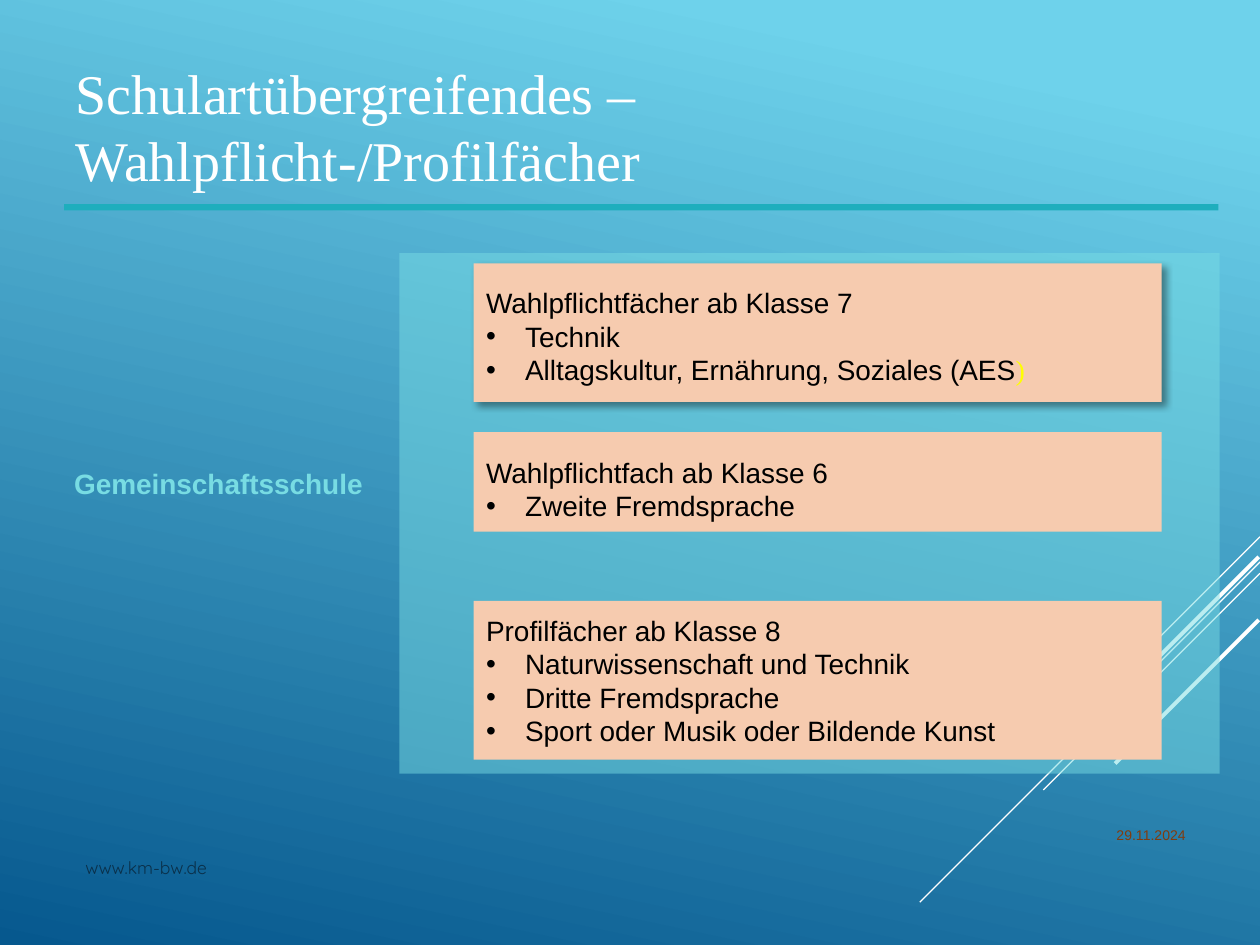
from lxml.etree import SubElement
from pptx import Presentation
from pptx.dml.color import RGBColor
from pptx.enum.shapes import MSO_CONNECTOR, MSO_SHAPE
from pptx.enum.text import MSO_ANCHOR, PP_ALIGN
from pptx.oxml import parse_xml
from pptx.oxml.ns import nsdecls, qn
from pptx.util import Inches, Pt


class Theme:
    sky = RGBColor.from_string("6ED2EB")
    deep = RGBColor.from_string("06588E")
    white = RGBColor.from_string("FFFFFF")
    aqua = RGBColor.from_string("78DCE3")
    teal = RGBColor.from_string("1EAEBD")
    peach = RGBColor.from_string("F6CBAF")
    black = RGBColor.from_string("000000")
    yellow = RGBColor.from_string("FFFF00")
    navy = RGBColor.from_string("0A304A")
    brown = RGBColor.from_string("813C0F")
    serif, sans, web = "Times New Roman", "Arial", "Quicksand"
    title_size, body_size, url_size, date_size = Pt(32), Pt(16), Pt(10), Pt(8)


def add_box(shape, left, top, width, height, color=None):
    """Add a borderless, shadowless shape; no color means no fill."""
    sp = s.shapes.add_shape(shape, Inches(left), Inches(top), Inches(width), Inches(height))
    sp.shadow.inherit = False
    sp.line.fill.background()
    if color is None:
        sp.fill.background()
    else:
        sp.fill.solid()
        sp.fill.fore_color.rgb = color
    if shape == MSO_SHAPE.ROUNDED_RECTANGLE:
        sp.adjustments[0] = 0
    tf = sp.text_frame
    tf.word_wrap = True
    tf.vertical_anchor = MSO_ANCHOR.MIDDLE
    return sp


def write(p, text, font, size, color, align=PP_ALIGN.LEFT):
    p.text = text
    p.alignment = align
    p.font.name, p.font.size, p.font.color.rgb = font, size, color


prs = Presentation()
prs.slide_width, prs.slide_height = Inches(10), Inches(7.5)
s = prs.slides.add_slide(prs.slide_layouts[5])

# Background gradient
bg = s.background.fill
bg.gradient()
bg.gradient_angle = 360 - 102
for stop, position, color in zip(bg.gradient_stops, (0.1, 1), (Theme.sky, Theme.deep)):
    stop.position = position
    stop.color.rgb = color

# Diagonal lines at 45 degrees: right end x, y, run and weight
for x, y, run, weight in [
    (10, 4.26, 0.83, 0.75),
    (10, 4.46, 2.7, 0.75),
    (10, 4.55, 1.72, 0.75),
    (9.99, 4.42, 1.57, 2.25),
    (9.99, 4.92, 1.14, 2.25),
]:
    line = s.shapes.add_connector(
        MSO_CONNECTOR.STRAIGHT, Inches(x), Inches(y), Inches(x - run), Inches(y + run))
    line.line.color.rgb = Theme.white
    line.line.width = Pt(weight)
    SubElement(line._element.spPr, qn("a:effectLst"))

# Translucent panel
panel = add_box(MSO_SHAPE.ROUNDED_RECTANGLE, 3.17, 2.01, 6.51, 4.13, Theme.aqua)
panel_color = panel._element.spPr.find(qn("a:solidFill"))[0]
SubElement(panel_color, qn("a:alpha"), val="50000")

# Title and rule
title = s.shapes.title
title.left, title.top, title.width, title.height = (Inches(v) for v in (0.5, 0.61, 9, 0.77))
title.text_frame.word_wrap = True
title.text_frame.vertical_anchor = MSO_ANCHOR.MIDDLE
write(title.text_frame.paragraphs[0], "Schulartübergreifendes – Wahlpflicht-/Profilfächer",
      Theme.serif, Theme.title_size, Theme.white)
add_box(MSO_SHAPE.RECTANGLE, 0.51, 1.62, 9.16, 0.05, Theme.teal)

# School type
school = add_box(MSO_SHAPE.ROUNDED_RECTANGLE, 0.49, 3.44, 2.6, 0.79)
p = school.text_frame.paragraphs[0]
write(p, "Gemeinschaftsschule", Theme.sans, Theme.body_size, Theme.aqua)
p.font.bold = True

# Subject cards: top, height, heading line spacing, heading, subjects
cards = []
for top, height, spacing, heading, subjects in [
    (2.09, 1.1, 1.2, "Wahlpflichtfächer ab Klasse 7",
     ["Technik", "Alltagskultur, Ernährung, Soziales (AES"]),
    (3.43, 0.79, 1.4, "Wahlpflichtfach ab Klasse 6", ["Zweite Fremdsprache"]),
    (4.77, 1.26, 1, "Profilfächer ab Klasse 8",
     ["Naturwissenschaft und Technik", "Dritte Fremdsprache",
      "Sport oder Musik oder Bildende Kunst"]),
]:
    card = add_box(MSO_SHAPE.ROUNDED_RECTANGLE, 3.76, top, 5.46, height, Theme.peach)
    tf = card.text_frame
    write(tf.paragraphs[0], heading, Theme.sans, Theme.body_size, Theme.black)
    tf.paragraphs[0].line_spacing = spacing
    for subject in subjects:
        p = tf.add_paragraph()
        write(p, subject, Theme.sans, Theme.body_size, Theme.black)
        pPr = p._p.get_or_add_pPr()
        pPr.set("marL", str(Inches(0.31)))
        pPr.set("indent", str(-Inches(0.31)))
        bullet_font = parse_xml(f'<a:buFont {nsdecls("a")} typeface="{Theme.sans}"/>')
        bullet = parse_xml(f'<a:buChar {nsdecls("a")} char="•"/>')
        pPr.insert_element_before(bullet_font, "a:defRPr")
        pPr.insert_element_before(bullet, "a:defRPr")
    cards.append(card)

# The first card has a yellow closing bracket and a shadow
r = cards[0].text_frame.paragraphs[-1].add_run()
r.text = ")"
r.font.name, r.font.color.rgb = Theme.serif, Theme.yellow
effects = cards[0]._element.spPr.find(qn("a:effectLst"))
effects.append(parse_xml(
    f'<a:outerShdw {nsdecls("a")} blurRad="{Pt(4)}" dist="{Pt(3)}" dir="{45 * 60000}" '
    f'algn="tl" rotWithShape="0"><a:srgbClr val="{Theme.black}"><a:alpha val="40000"/>'
    '</a:srgbClr></a:outerShdw>'))

# Footer
for left, top, width, height, text, font, size, color, align in [
    (0.58, 6.75, 6.36, 0.4, "www.km-bw.de", Theme.web, Theme.url_size, Theme.navy, PP_ALIGN.LEFT),
    (8.54, 6.51, 0.97, 0.39, "29.11.2024", Theme.sans, Theme.date_size, Theme.brown, PP_ALIGN.RIGHT),
]:
    box = s.shapes.add_textbox(Inches(left), Inches(top), Inches(width), Inches(height))
    box.text_frame.word_wrap = True
    write(box.text_frame.paragraphs[0], text, font, size, color, align)

prs.save("out.pptx")
